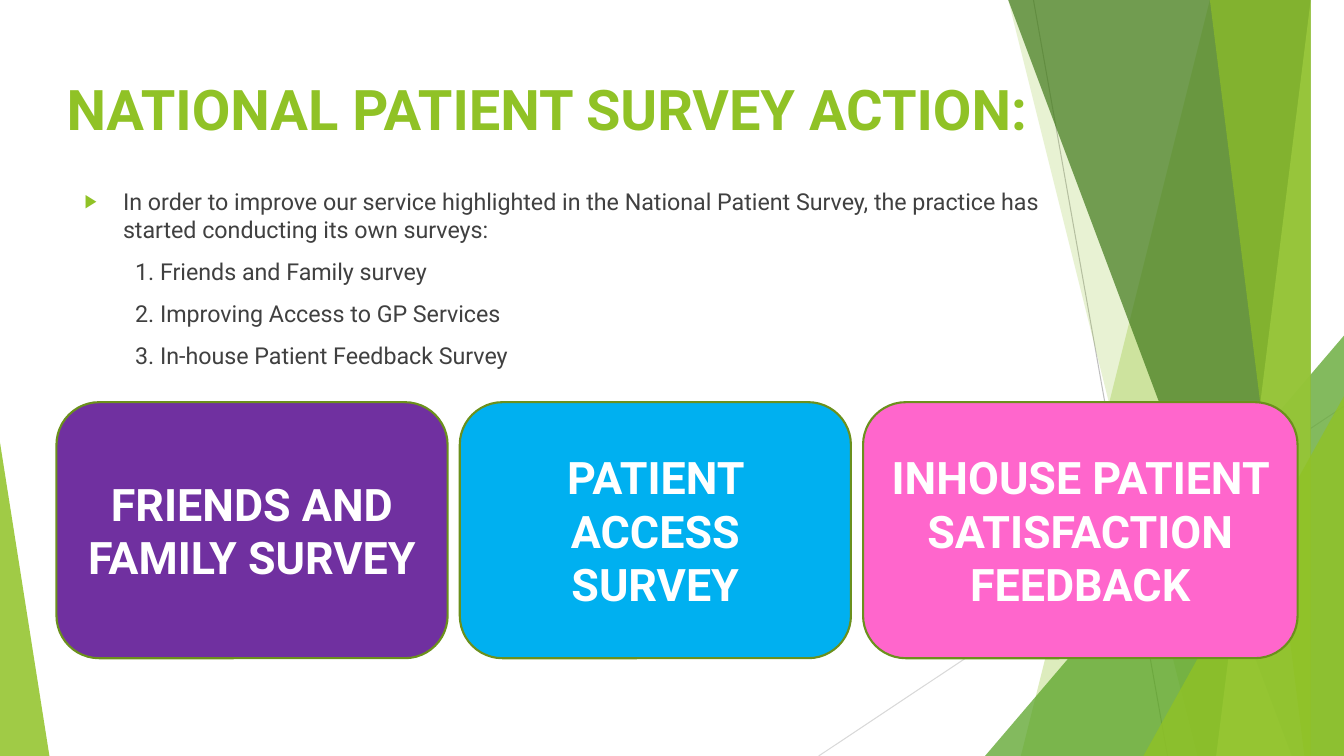
from dataclasses import dataclass

from lxml import etree
from pptx import Presentation, util as u
from pptx.dml.color import RGBColor
from pptx.enum import shapes, text
from pptx.oxml import ns

FONT = "Roboto"
GREEN = "90C226"
WIDTH, HEIGHT = 13.33, 7.5


@dataclass
class Line:
    start: tuple[float, float]
    end: tuple[float, float]
    color: str


@dataclass
class Facet:
    """A translucent outline that bleeds off the slide."""
    points: list[tuple[float, float]]
    color: str
    opacity: int


@dataclass
class Triangle:
    left: float
    top: float
    width: float
    apex: float
    color: str
    opacity: int


@dataclass
class Card:
    label: str
    left: float
    width: float
    color: str


def right_facet(top_left: float, bottom_left: float, color: str, opacity: int) -> Facet:
    """A facet that fills the slide from a slanted left edge to the right side."""
    points = [(top_left, -0.01), (WIDTH, -0.01), (WIDTH, HEIGHT), (bottom_left, HEIGHT)]
    return Facet(points, color, opacity)


DECORATIONS = [
    Line((10.25, 0), (11.58, HEIGHT), "BFBFBF"),
    Line((WIDTH, 4.03), (8.12, HEIGHT), "D9D9D9"),
    right_facet(12.28, 10.04, GREEN, 30),
    right_facet(10.5, 11.83, GREEN, 20),
    Triangle(9.77, 3.33, 3.56, 1, "54A021", 72),
    right_facet(10.21, 12.91, "3F7819", 70),
    right_facet(13.03, 11.92, "C0E474", 70),
    right_facet(11.96, 13.18, GREEN, 65),
    Triangle(11.34, 3.93, 1.99, 1, GREEN, 80),
    Triangle(0, 4.39, 0.49, 0, GREEN, 85),
]

INTRODUCTION = ("In order to improve our service highlighted in the National Patient "
                "Survey, the practice has started conducting its own surveys:")
SURVEYS = ["Friends and Family survey", "Improving Access to GP Services",
           "In-house Patient Feedback Survey"]

CARDS = [
    Card("PATIENT ACCESS SURVEY", 4.56, 3.88, "00B0F0"),
    Card("INHOUSE PATIENT SATISFACTION FEEDBACK", 8.56, 4.31, "FF66CC"),
    Card("FRIENDS AND FAMILY SURVEY", 0.56, 3.88, "7030A0"),
]


def paint(color_holder, color: str) -> None:
    """Make a fill or a line solid in a hex colour."""
    color_holder.solid()
    color_holder.fore_color.rgb = RGBColor.from_string(color)


def write(paragraph, words: str, *, size: float, color: str, bold: bool = False,
          align=text.PP_ALIGN.LEFT, before: float = 0, margin: float = 0,
          indent: float = 0, bullet: str = "") -> None:
    """Fill a paragraph with one formatted run."""
    run = paragraph.add_run()
    run.text = words
    run.font.name, run.font.size, run.font.bold = FONT, u.Pt(size), bold
    paint(run.font.fill, color)
    paragraph.alignment = align
    paragraph.space_before = u.Pt(before)
    properties = paragraph._p.get_or_add_pPr()
    properties.set("marL", str(u.Inches(margin)))
    properties.set("indent", str(u.Inches(indent)))
    if not bullet:
        etree.SubElement(properties, ns.qn("a:buNone"))
        return
    bullet_color = etree.SubElement(properties, ns.qn("a:buClr"))
    etree.SubElement(bullet_color, ns.qn("a:srgbClr"), val=GREEN)
    etree.SubElement(properties, ns.qn("a:buSzPct"), val="80000")
    etree.SubElement(properties, ns.qn("a:buChar"), char=bullet)


def finish_facet(shape, color: str, opacity: int) -> None:
    """Give a decoration a translucent fill and no outline."""
    shape.shadow.inherit = False
    paint(shape.fill, color)
    shape.line.fill.background()
    color_element = shape.element.spPr.find(".//" + ns.qn("a:srgbClr"))
    etree.SubElement(color_element, ns.qn("a:alpha"), val=str(opacity * 1000))


def draw_decoration(slide, item: Line | Facet | Triangle) -> None:
    if isinstance(item, Line):
        ends = [u.Inches(value) for value in (*item.start, *item.end)]
        connector = slide.shapes.add_connector(shapes.MSO_CONNECTOR.STRAIGHT, *ends)
        paint(connector.line.fill, item.color)
        connector.line.width = u.Pt(0.75)
        etree.SubElement(connector.element.spPr, ns.qn("a:effectLst"))
        return
    if isinstance(item, Facet):
        builder = slide.shapes.build_freeform(*item.points[0], scale=u.Inches(1))
        builder.add_line_segments(item.points[1:], close=True)
        shape = builder.convert_to_shape()
    else:
        shape = slide.shapes.add_shape(
            shapes.MSO_SHAPE.ISOSCELES_TRIANGLE, u.Inches(item.left), u.Inches(item.top),
            u.Inches(item.width), u.Inches(HEIGHT - item.top))
        shape.adjustments[0] = item.apex
    finish_facet(shape, item.color, item.opacity)


def draw_card(slide, card: Card) -> None:
    shape = slide.shapes.add_shape(
        shapes.MSO_SHAPE.ROUNDED_RECTANGLE, u.Inches(card.left), u.Inches(3.99),
        u.Inches(card.width), u.Inches(2.54))
    shape.shadow.inherit = False
    paint(shape.fill, card.color)
    paint(shape.line.fill, "6B901C")
    shape.line.width = u.Pt(1.5)
    frame = shape.text_frame
    frame.word_wrap = True
    frame.vertical_anchor = text.MSO_ANCHOR.MIDDLE
    write(frame.paragraphs[0], card.label, size=32, color="FFFFFF", bold=True,
          align=text.PP_ALIGN.CENTER)


def place(placeholder, left: float, top: float, width: float, height: float):
    """Move a placeholder in front of the decorations and return its text frame."""
    placeholder.left, placeholder.top = u.Inches(left), u.Inches(top)
    placeholder.width, placeholder.height = u.Inches(width), u.Inches(height)
    placeholder.element.getparent().append(placeholder.element)
    frame = placeholder.text_frame
    frame.word_wrap = True
    frame.auto_size = text.MSO_AUTO_SIZE.NONE
    frame.vertical_anchor = text.MSO_ANCHOR.TOP
    return frame


def main() -> None:
    presentation = Presentation()
    presentation.slide_width = u.Inches(WIDTH)
    presentation.slide_height = u.Inches(HEIGHT)
    slide = presentation.slides.add_slide(presentation.slide_layouts[1])

    # Background facets
    for item in DECORATIONS:
        draw_decoration(slide, item)

    # Title
    title = place(slide.shapes.title, 0.56, 0.69, 9.83, 1.44)
    write(title.paragraphs[0], "NATIONAL PATIENT SURVEY ACTION:", size=40,
          color=GREEN, bold=True)

    # Introduction and numbered surveys
    body = place(slide.placeholders[1], 0.74, 1.81, 9.83, 1.78)
    style = {"size": 16.6, "color": "404040", "before": 10}
    write(body.paragraphs[0], INTRODUCTION, margin=0.38, indent=-0.38, bullet="▶", **style)
    for number, survey in enumerate(SURVEYS, start=1):
        write(body.add_paragraph(), f"{number}. {survey}", margin=0.5, **style)

    # Survey cards
    for card in CARDS:
        draw_card(slide, card)

    presentation.save("out.pptx")


if __name__ == "__main__":
    main()
